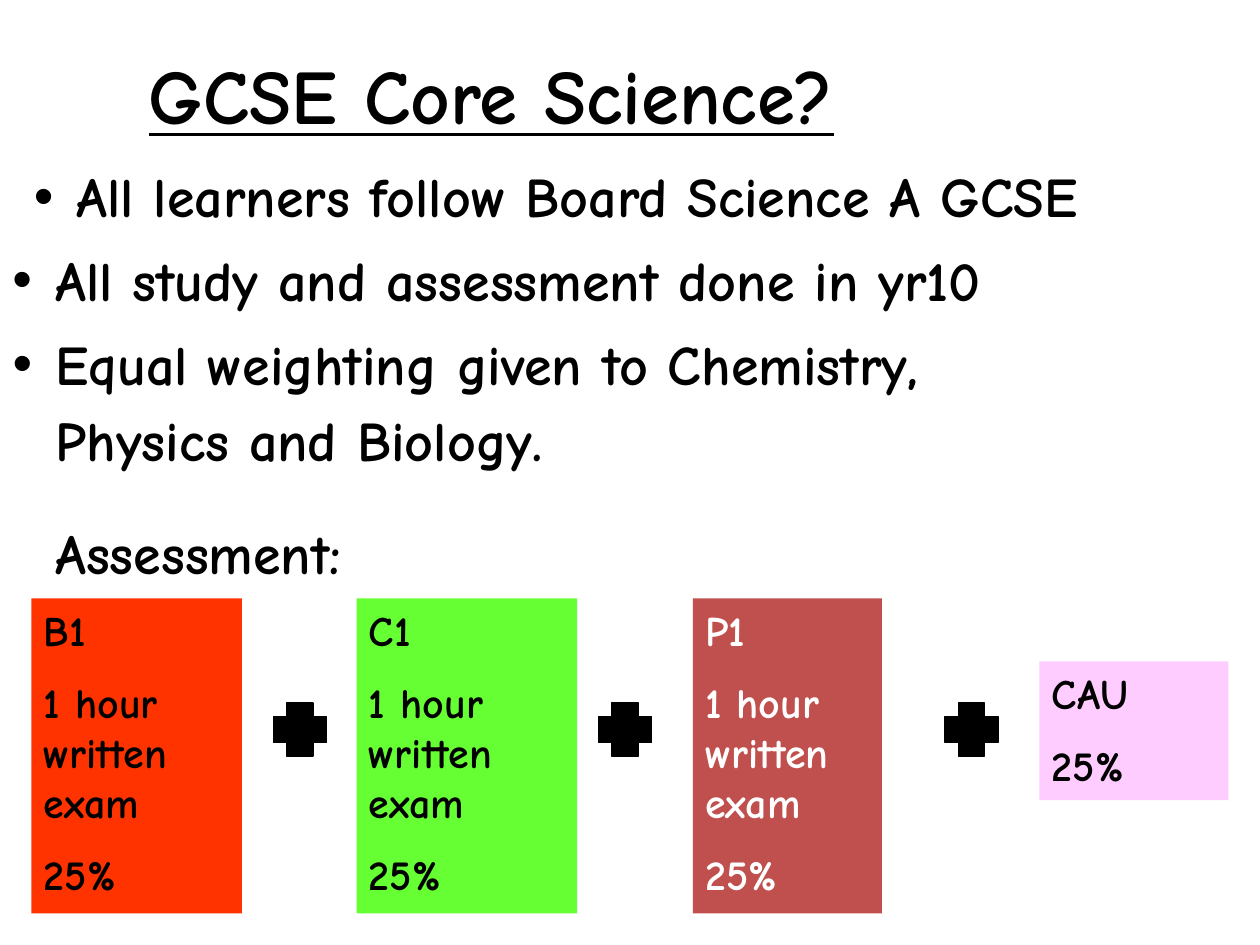
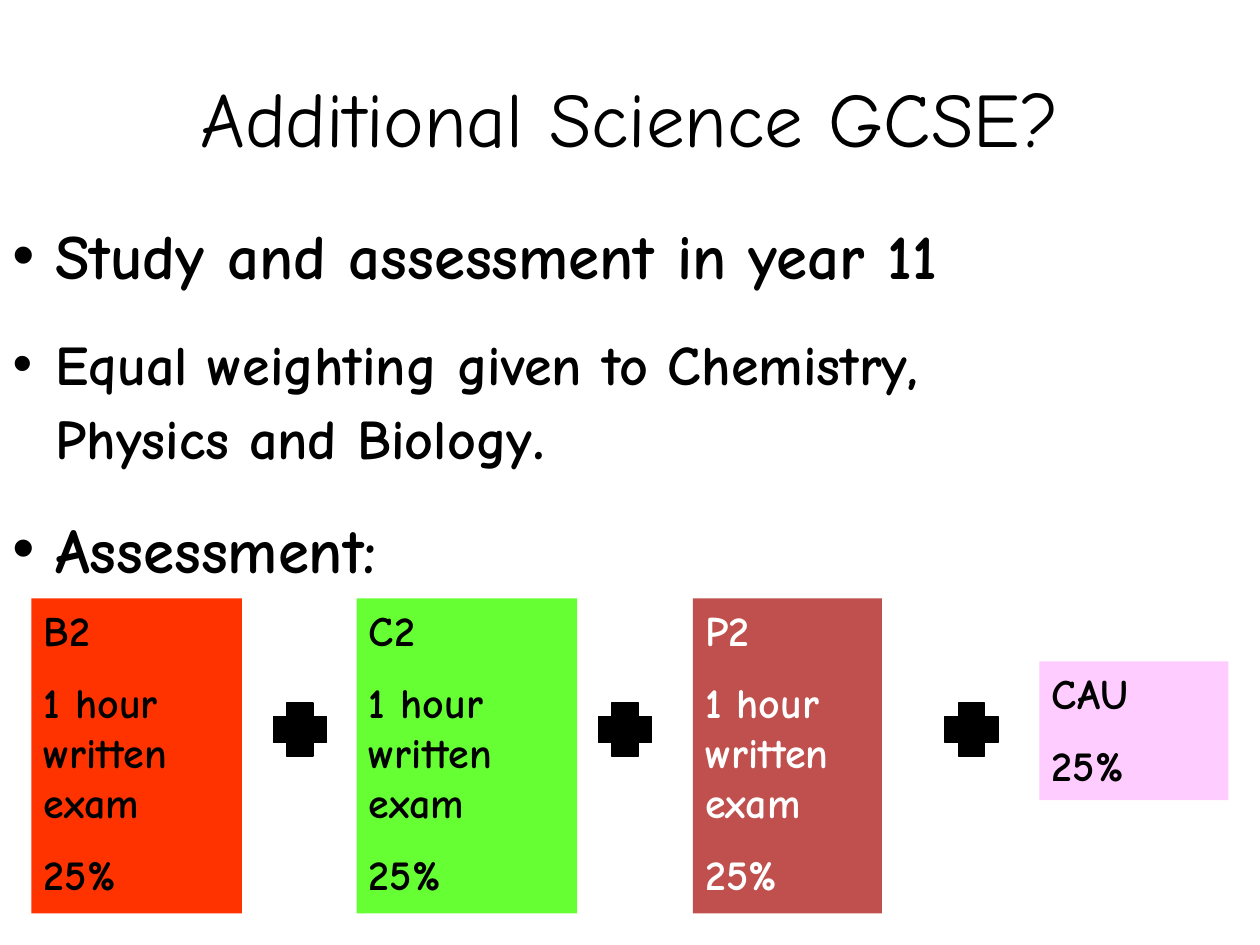
import pptx
import pptx.util
import pptx.dml.color
import pptx.enum.shapes
import pptx.enum.text
import pptx.oxml.ns
import lxml.etree

Inches = pptx.util.Inches
Pt = pptx.util.Pt
RGBColor = pptx.dml.color.RGBColor
ALIGN = pptx.enum.text.PP_ALIGN
ANCHOR = pptx.enum.text.MSO_ANCHOR
SHAPES = pptx.enum.shapes.MSO_SHAPE

BLACK = RGBColor(0x00, 0x00, 0x00)
WHITE = RGBColor(0xFF, 0xFF, 0xFF)
BIOLOGY_RED = RGBColor(0xFF, 0x33, 0x00)
CHEMISTRY_GREEN = RGBColor(0x66, 0xFF, 0x33)
PHYSICS_BROWN = RGBColor(0xC0, 0x50, 0x4D)
COURSEWORK_PINK = RGBColor(0xFF, 0xCC, 0xFF)

FONT = "Comic Neue"
TITLE_SIZE = 44
LARGE_SIZE = 36
LIST_SIZE = 32
CARD_SIZE = 24
LIST_INDENT = 0.34
LIST_LINE = 43.2

EXAMS = [
    ("B", 0.25, 1.67, BIOLOGY_RED, BLACK),
    ("C", 2.83, 1.75, CHEMISTRY_GREEN, BLACK),
    ("P", 5.5, 1.5, PHYSICS_BROWN, WHITE),
]
PLUS_LEFTS = [2.17, 4.75, 7.5]


def place(shape, left, top, width, height):
    shape.left, shape.top = Inches(left), Inches(top)
    shape.width, shape.height = Inches(width), Inches(height)


def prepare_frame(shape, anchor):
    frame = shape.text_frame
    frame.word_wrap = True
    frame.auto_size = pptx.enum.text.MSO_AUTO_SIZE.NONE
    frame.vertical_anchor = anchor
    return frame


def next_paragraph(frame, index):
    return frame.paragraphs[0] if index == 0 else frame.add_paragraph()


def add_run(paragraph, text, size, color=BLACK, bold=True, underline=False):
    run = paragraph.add_run()
    run.text = text
    run.font.name = FONT
    run.font.size = Pt(size)
    run.font.bold = bold
    run.font.underline = underline
    run.font.color.rgb = color


def set_bullet(paragraph, bulleted):
    properties = paragraph._p.get_or_add_pPr()
    properties.set("marL", str(Inches(LIST_INDENT)))
    properties.set("indent", str(-Inches(LIST_INDENT) if bulleted else 0))
    qualified = pptx.oxml.ns.qn
    if bulleted:
        lxml.etree.SubElement(properties, qualified("a:buFont"), typeface="Arial")
        lxml.etree.SubElement(properties, qualified("a:buChar"), char="•")
    else:
        lxml.etree.SubElement(properties, qualified("a:buNone"))


def fill_list(shape, lines):
    frame = prepare_frame(shape, ANCHOR.TOP)
    for index, (bulleted, runs) in enumerate(lines):
        paragraph = next_paragraph(frame, index)
        paragraph.alignment = ALIGN.LEFT
        paragraph.line_spacing = Pt(LIST_LINE)
        paragraph.space_before = Pt(0)
        set_bullet(paragraph, bulleted)
        for text, size in runs:
            add_run(paragraph, text, size)


def add_point(slide, left, top, text, size, bulleted=True):
    box = slide.shapes.add_textbox(
        Inches(left), Inches(top), Inches(10 - left), Inches(0.7))
    fill_list(box, [(bulleted, [(text, size)])])


def set_title(slide, text, box, alignment, anchor, emphasis):
    title = slide.shapes.title
    place(title, *box)
    paragraph = prepare_frame(title, anchor).paragraphs[0]
    paragraph.alignment = alignment
    add_run(paragraph, text, TITLE_SIZE, bold=emphasis, underline=emphasis)


def set_weighting(slide, stop_size):
    body = slide.placeholders[1]
    place(body, 0, 2.5, 10, 1.3)
    fill_list(body, [
        (True, [("Equal weighting given to Chemistry,", LIST_SIZE)]),
        (False, [("Physics and Biology", LIST_SIZE), (".", stop_size)]),
    ])


def add_filled_shape(slide, kind, box, color):
    shape = slide.shapes.add_shape(kind, *(Inches(length) for length in box))
    shape.shadow.inherit = False
    shape.fill.solid()
    shape.fill.fore_color.rgb = color
    shape.line.fill.background()
    return shape


def add_card(slide, box, fill, color, lines):
    card = add_filled_shape(slide, SHAPES.RECTANGLE, box, fill)
    frame = prepare_frame(card, ANCHOR.TOP)
    for index, text in enumerate(lines):
        paragraph = next_paragraph(frame, index)
        paragraph.alignment = ALIGN.LEFT
        paragraph.space_before = Pt(CARD_SIZE / 2 if index else 0)
        add_run(paragraph, text, CARD_SIZE, color)


def add_plus(slide, left):
    plus = add_filled_shape(slide, SHAPES.CROSS, (left, 5.58, 0.42, 0.42), BLACK)
    plus.line.color.rgb = BLACK
    plus.line.width = Pt(0.75)


def add_assessment(slide, unit):
    for letter, left, width, fill, color in EXAMS:
        add_card(slide, (left, 4.75, width, 2.5), fill, color,
                 [f"{letter}{unit}", "1 hour written exam", "25%"])
    for left in PLUS_LEFTS:
        add_plus(slide, left)
    add_card(slide, (8.25, 5.25, 1.5, 1.1), COURSEWORK_PINK, BLACK, ["CAU", "25%"])


def build_core_science(slide):
    set_title(slide, "GCSE Core Science?", (1.08, 0.33, 7.5, 0.84),
              ALIGN.LEFT, ANCHOR.TOP, True)
    add_point(slide, 0.17, 1.17, "All learners follow Board Science A GCSE", LIST_SIZE)
    add_point(slide, 0, 1.83, "All study and assessment done in yr10", LIST_SIZE)
    set_weighting(slide, LIST_SIZE)
    add_point(slide, 0, 4, "Assessment:", LIST_SIZE, bulleted=False)
    add_assessment(slide, 1)


def build_additional_science(slide):
    set_title(slide, "Additional Science GCSE?", (0.5, 0.3, 9, 1.25),
              ALIGN.CENTER, ANCHOR.MIDDLE, False)
    add_point(slide, 0, 1.67, "Study and assessment in year 11", LARGE_SIZE)
    set_weighting(slide, LARGE_SIZE)
    add_point(slide, 0, 4, "Assessment:", LARGE_SIZE)
    add_assessment(slide, 2)


def main():
    presentation = pptx.Presentation()
    presentation.slide_width = Inches(10)
    presentation.slide_height = Inches(7.5)
    layout = presentation.slide_layouts[1]
    for build in (build_core_science, build_additional_science):
        build(presentation.slides.add_slide(layout))
    presentation.save("out.pptx")


if __name__ == "__main__":
    main()
